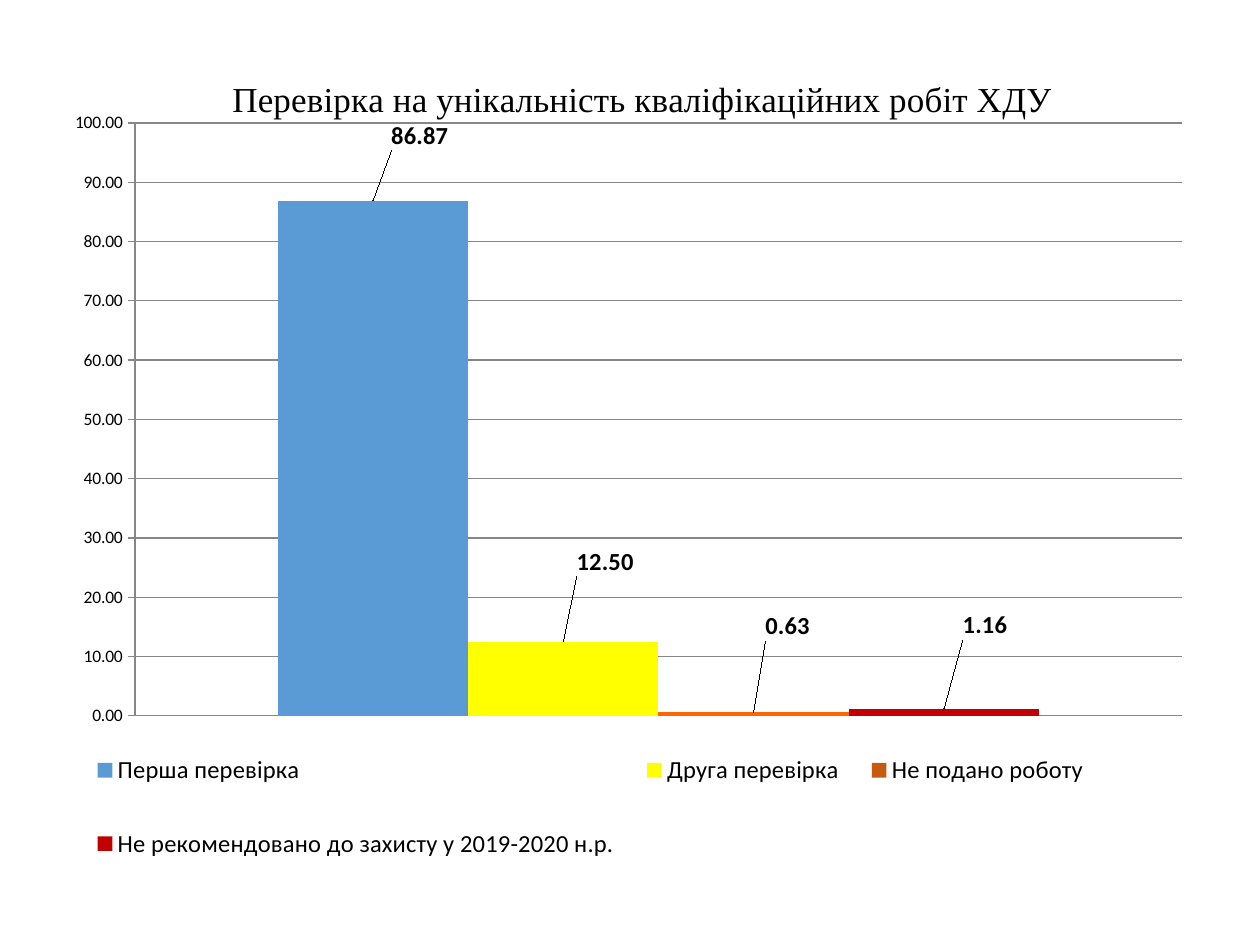
import dataclasses

import pptx
import pptx.chart.data
import pptx.dml.color
import pptx.enum.chart
import pptx.oxml
import pptx.oxml.ns
import pptx.util

PX = 914400 // 126
CHART = (43, 45, 1186, 857)
PLOT = (92, 78, 1047, 593)
TITLE = (183, 25)
LEGEND = (30, 667, 1035, 190)
FORMAT = "0.00"
SERIES = [
    ("Перша перевірка", 86.87, "5B9BD5", "5B9BD5", (47, -45)),
    ("Друга перевірка", 12.5, "FFFF00", "FFFF00", (42, -60)),
    ("Не подано роботу", 0.63, "C55A11", "FF6600", (34, -66)),
    ("Не рекомендовано до захисту у 2019-2020 н.р.", 1.16, "C00000", "C00000", (41, -64)),
]


@dataclasses.dataclass(frozen=True)
class Theme:
    """Colours, fonts and type sizes of the slide."""
    text: str = "000000"
    line: str = "868686"
    body_font: str = "Calibri"
    title_font: str = "Times New Roman"
    axis_size: int = 10
    label_size: int = 14
    title_size: int = 20


THEME = Theme()


def rgb(color):
    """Turn a hex string into a colour."""
    return pptx.dml.color.RGBColor.from_string(color)


def set_font(font, size, name=THEME.body_font, bold=False):
    """Set face, size, weight and colour of a font."""
    font.name, font.size, font.bold = name, pptx.util.Pt(size), bold
    font.color.rgb = rgb(THEME.text)


def set_fill(fmt, color):
    """Give a series or point a solid fill."""
    fmt.fill.solid()
    fmt.fill.fore_color.rgb = rgb(color)


def set_layout(parent, index, box, edge=True, inner=False):
    """Place a chart part by px measured inside the chart."""
    for old in parent.findall(pptx.oxml.ns.qn("c:layout")):
        parent.remove(old)
    tags = [("layoutTarget", "inner")] if inner else []
    if edge:
        tags += [("xMode", "edge"), ("yMode", "edge")]
    tags += [(tag, round(value / CHART[2 + i % 2], 4))
             for i, (tag, value) in enumerate(zip("xywh", box))]
    body = "".join(f'<c:{tag} val="{value}"/>' for tag, value in tags)
    parent.insert(index, pptx.oxml.parse_xml(
        f'<c:layout {pptx.oxml.ns.nsdecls("c")}><c:manualLayout>{body}'
        '</c:manualLayout></c:layout>'))


def add_title(chart, text):
    """Write the chart title."""
    chart.has_title = True
    p = chart.chart_title.text_frame.paragraphs[0]
    r = p.add_run()
    r.text = text
    set_font(r.font, THEME.title_size, THEME.title_font)
    set_layout(chart.chart_title._element, 1, TITLE)


def style_axes(chart):
    """Hide the category axis and style the value axis."""
    chart.category_axis.visible = False
    axis = chart.value_axis
    axis.minimum_scale, axis.maximum_scale, axis.major_unit = 0, 100, 10
    axis.major_tick_mark = pptx.enum.chart.XL_TICK_MARK.CROSS
    axis.tick_labels.number_format = FORMAT
    axis.tick_labels.number_format_is_linked = False
    set_font(axis.tick_labels.font, THEME.axis_size)
    for fmt in (axis.format, axis.major_gridlines.format):
        fmt.line.color.rgb = rgb(THEME.line)
        fmt.line.width = pptx.util.Pt(0.75)


def style_series(series, color, point_color, shift):
    """Colour a series and place its value label."""
    set_fill(series.format, color)
    series.invert_if_negative = False
    point = series.points[0]
    if point_color != color:
        set_fill(point.format, point_color)
    labels = series.data_labels
    labels.show_value = True
    labels.number_format, labels.number_format_is_linked = FORMAT, False
    set_font(labels.font, THEME.label_size, bold=True)
    label = point.data_label
    set_font(label.font, THEME.label_size, bold=True)
    label.position = pptx.enum.chart.XL_LABEL_POSITION.OUTSIDE_END
    set_layout(label._get_or_add_dLbl(), 1, shift, edge=False)


def add_legend(chart):
    """Add the legend below the plot."""
    chart.has_legend = True
    legend = chart.legend
    legend.position = pptx.enum.chart.XL_LEGEND_POSITION.BOTTOM
    legend.include_in_layout = False
    set_font(legend.font, THEME.label_size)
    set_layout(legend._element, 1, LEGEND)


def add_column_chart(slide):
    """Add the clustered column chart."""
    data = pptx.chart.data.CategoryChartData(number_format=FORMAT)
    data.categories = ["1"]
    for name, value, *_ in SERIES:
        data.add_series(name, [value])
    chart = slide.shapes.add_chart(
        pptx.enum.chart.XL_CHART_TYPE.COLUMN_CLUSTERED,
        *(v * PX for v in CHART), data).chart
    set_font(chart.font, THEME.axis_size)
    plot = chart.plots[0]
    plot.gap_width, plot.overlap, plot.vary_by_categories = 150, 0, False
    for series, (_, _, color, point_color, shift) in zip(plot.series, SERIES):
        style_series(series, color, point_color, shift)
    set_layout(chart._chartSpace.chart.plotArea, 0, PLOT, inner=True)
    return chart


def main():
    """Build and save the slide."""
    prs = pptx.Presentation()
    prs.slide_width, prs.slide_height = 1260 * PX, 945 * PX
    s = prs.slides.add_slide(prs.slide_layouts[6])
    chart = add_column_chart(s)
    add_title(chart, "Перевірка на унікальність кваліфікаційних робіт ХДУ")
    style_axes(chart)
    add_legend(chart)
    prs.save("out.pptx")


if __name__ == "__main__":
    main()
